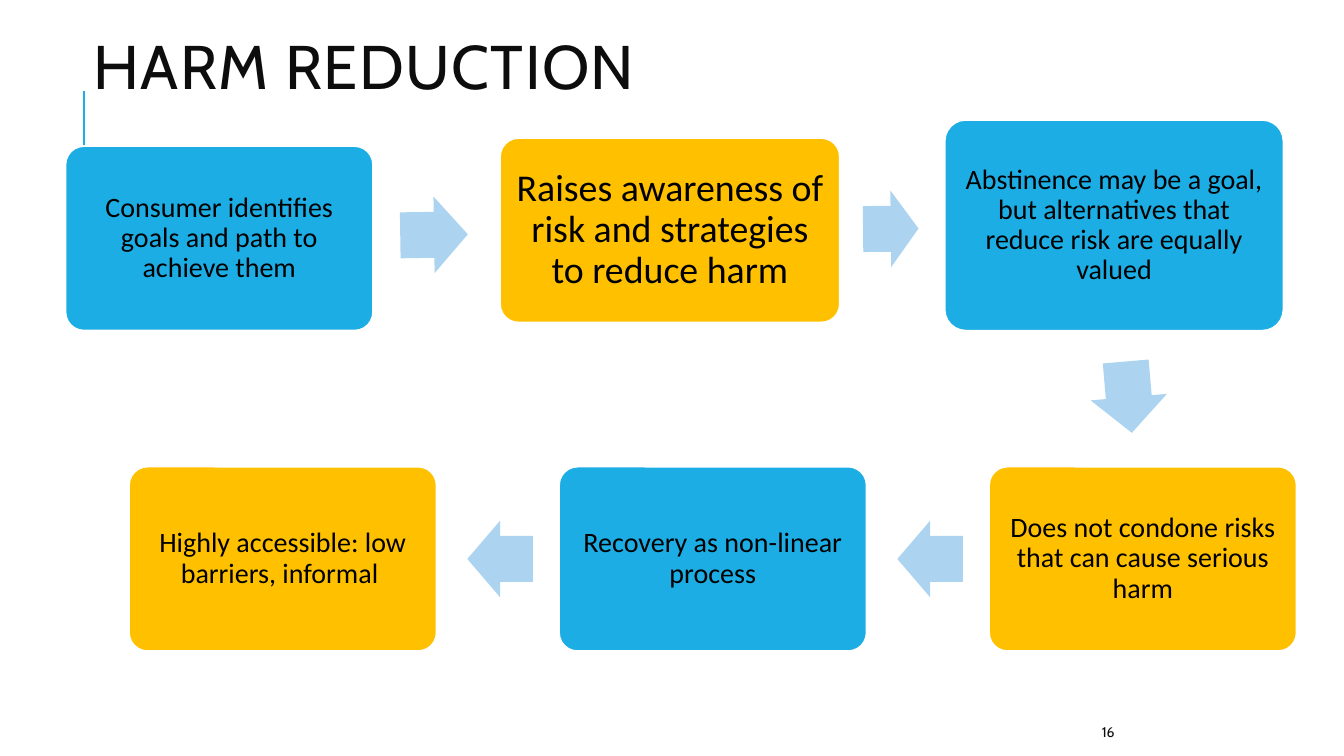
from pptx import Presentation
from pptx.dml.color import RGBColor
from pptx.enum.shapes import MSO_CONNECTOR, MSO_SHAPE
from pptx.enum.text import MSO_ANCHOR, PP_ALIGN
from pptx.oxml.ns import qn
from pptx.util import Inches, Pt
from lxml import etree

TITLE = "HARM REDUCTION"
PAGE_NUMBER = "16"
BLUE, GOLD, PALE = "1CADE4", "FFC000", "ACD3EF"
WHITE, BLACK, INK = "FFFFFF", "000000", "0D0D0D"
BOX_W, BOX_H = 3.05, 1.83
ROW_TOP, ROW_RIGHT, ROW_STEP = 4.63, 9.81, 4.265
ARROW_H = 0.76

TOP_STEPS = [
    ("Consumer identifies goals and path to achieve them",
     (0.65, 1.45, BOX_W, BOX_H), 20, 0.08),
    ("Raises awareness of risk and strategies to reduce harm",
     (4.96, 1.37, 3.37, BOX_H), 27, 0.11),
    ("Abstinence may be a goal, but alternatives that reduce risk are equally valued",
     (9.37, 1.19, 3.36, 2.09), 20, 0.08),
]
BOTTOM_STEPS = [
    "Does not condone risks that can cause serious harm",
    "Recovery as non-linear process",
    "Highly accessible: low barriers, informal ",
]
TOP_ARROWS = [(3.97, 1.95, 0.67, 359.1), (8.56, 1.89, 0.55, 359.4), (10.84, 3.56, 0.71, 85.1)]


def color(value):
    return RGBColor.from_string(value)


def write(sp, text, size=20, font="Calibri", ink=BLACK, align=PP_ALIGN.LEFT,
          leading=1.0, inset=None, tracking=0):
    tf = sp.text_frame
    tf.word_wrap = True
    tf.vertical_anchor = MSO_ANCHOR.MIDDLE
    if inset is not None:
        tf.margin_left = tf.margin_right = tf.margin_top = tf.margin_bottom = Inches(inset)
    p = tf.paragraphs[0]
    p.alignment = align
    p.line_spacing = leading
    r = p.add_run()
    r.text = text
    r.font.size = Pt(size)
    r.font.name = font
    r.font.color.rgb = color(ink)
    if tracking:
        r.font._element.set("spc", str(tracking * 100))


def add_block(slide, kind, box, fill, adjustments):
    sp = slide.shapes.add_shape(kind, *map(Inches, box))
    sp.shadow.inherit = False
    sp.fill.solid()
    sp.fill.fore_color.rgb = color(fill)
    sp.line.fill.background()
    for i, value in enumerate(adjustments):
        sp.adjustments[i] = value
    return sp


def add_step(slide, text, box, fill, size=20, inset=0.08):
    sp = add_block(slide, MSO_SHAPE.ROUNDED_RECTANGLE, box, fill, [0.1])
    sp.line.color.rgb = color(WHITE)
    sp.line.width = Pt(1.25)
    write(sp, text, size=size, align=PP_ALIGN.CENTER, leading=0.9, inset=inset)


def add_arrow(slide, left, top, width, angle):
    sp = add_block(slide, MSO_SHAPE.RIGHT_ARROW, (left, top, width, ARROW_H), PALE, [0.6, 0.5])
    sp.rotation = angle


def main():
    prs = Presentation()
    prs.slide_width, prs.slide_height = Inches(13.33), Inches(7.5)
    slide = prs.slides.add_slide(prs.slide_layouts[6])

    accent = slide.shapes.add_connector(
        MSO_CONNECTOR.STRAIGHT, *map(Inches, (0.83, 1.9, 0.83, 0.9)))
    accent.line.color.rgb = color(BLUE)
    accent.line.width = Pt(1.5)
    etree.SubElement(accent._element.spPr, qn("a:effectLst"))

    title = slide.shapes.add_textbox(*map(Inches, (0.83, -0.11, 10.63, 1.64)))
    write(title, TITLE, size=44, font="Cabin", ink=INK, leading=0.8, tracking=1)

    steps = TOP_STEPS + [
        (text, (ROW_RIGHT - i * ROW_STEP, ROW_TOP, BOX_W, BOX_H), 20, 0.08)
        for i, text in enumerate(BOTTOM_STEPS)
    ]
    for i, (text, box, size, inset) in enumerate(steps):
        add_step(slide, text, box, GOLD if i % 2 else BLUE, size, inset)

    arrow_top = ROW_TOP + (BOX_H - ARROW_H) / 2
    bottom_arrows = [(8.9 - i * ROW_STEP, arrow_top, 0.65, 180) for i in range(2)]
    for arrow in TOP_ARROWS + bottom_arrows:
        add_arrow(slide, *arrow)

    number = slide.shapes.add_textbox(*map(Inches, (10.83, 7.06, 1.43, 0.4)))
    write(number, PAGE_NUMBER, size=10, font="Cabin", ink=INK)

    prs.save("out.pptx")


if __name__ == "__main__":
    main()
